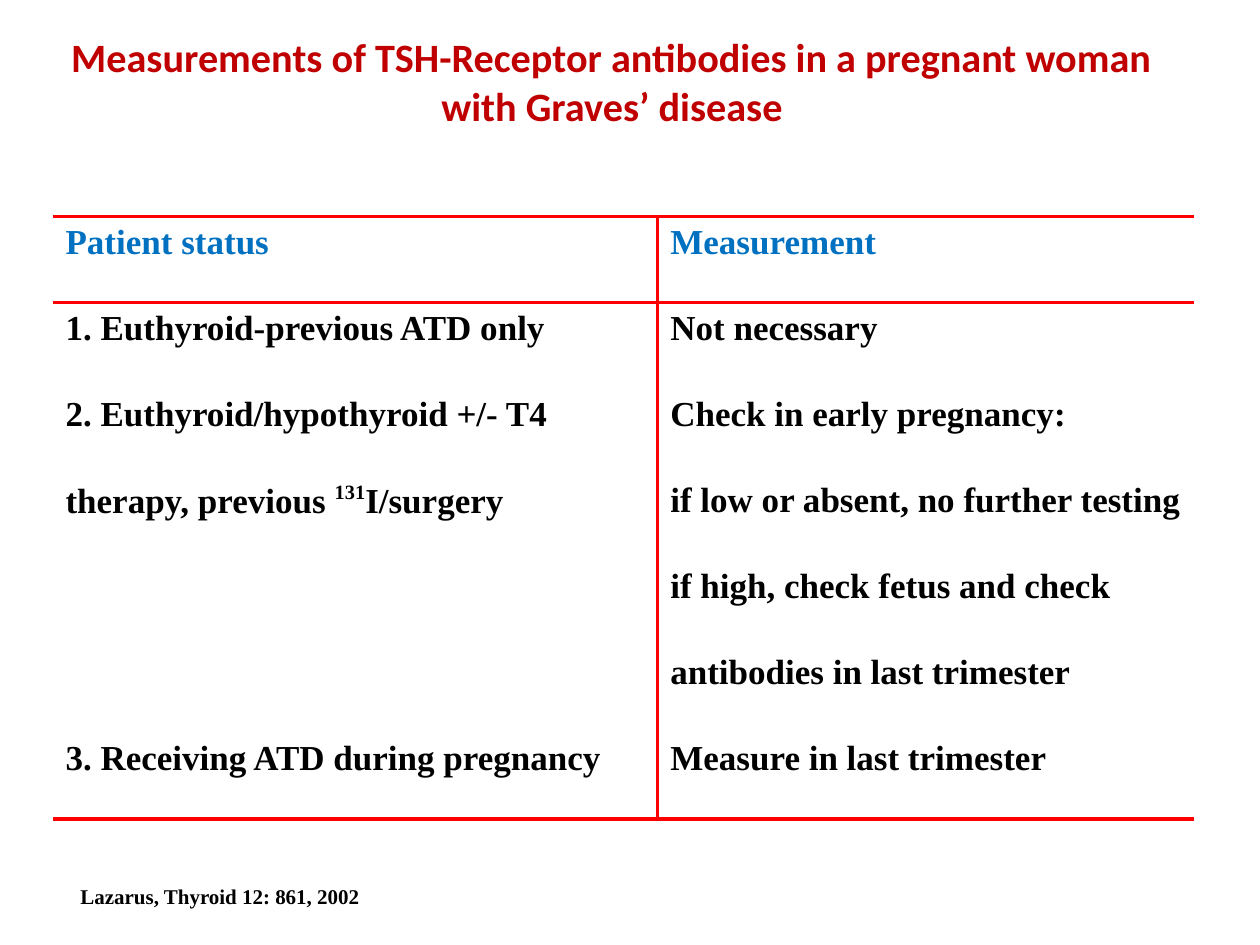
from lxml import etree
from pptx import Presentation
from pptx.dml.color import RGBColor
from pptx.enum.text import MSO_AUTO_SIZE, PP_ALIGN
from pptx.oxml.ns import qn
from pptx.util import Inches, Pt

CENTER = PP_ALIGN.CENTER
LEFT = PP_ALIGN.LEFT
GROW = MSO_AUTO_SIZE.SHAPE_TO_FIT_TEXT
PLAIN = "{2D5ABB26-0587-4C30-8999-92F81FD0307C}"
BLACK, BLUE, RED, DARK = "000000", "0070C0", "FF0000", "C00000"
SERIF, SANS = "Times New Roman", "Calibri"

ROWS = [
    (["Patient status"], ["Measurement"]),
    (["1. Euthyroid-previous ATD only"], ["Not necessary"]),
    (["2. Euthyroid/hypothyroid +/- T4"], ["Check in early pregnancy:"]),
    (["therapy, previous ", ("131", 42), "I/surgery"],
     ["if low or absent, no further testing"]),
    ([], ["if high, check fetus and check"]),
    ([], ["antibodies in last trimester"]),
    (["3. Receiving ATD during pregnancy"], ["Measure in last trimester"]),
]


def color(code):
    return RGBColor.from_string(code)


class Page:
    def __init__(self, slide, rule=RED, width=2.25):
        self.slide = slide
        self.rule = rule
        self.width = width

    def add_runs(self, para, runs, size, tint, font=SERIF):
        for item in runs:
            text, lift = (item, 0) if isinstance(item, str) else item
            run = para.add_run()
            run.text = text
            run.font.name = font
            run.font.size = Pt(size)
            run.font.bold = True
            run.font.color.rgb = color(tint)
            if lift:
                run._r.get_or_add_rPr().set("baseline", str(lift * 1000))

    def text(self, box, runs, size, tint, font=SERIF, align=LEFT, wrap=True):
        shape = self.slide.shapes.add_textbox(*map(Inches, box))
        frame = shape.text_frame
        frame.word_wrap = wrap
        frame.auto_size = GROW
        para = frame.paragraphs[0]
        para.alignment = align
        self.add_runs(para, runs, size, tint, font)

    def border(self, cell, sides):
        props = cell._tc.get_or_add_tcPr()
        for side in "LRTB":
            line = etree.SubElement(props, qn("a:ln" + side))
            if side in sides:
                line.set("w", str(Pt(self.width)))
                fill = etree.SubElement(line, qn("a:solidFill"))
                etree.SubElement(fill, qn("a:srgbClr"), val=self.rule)
            else:
                etree.SubElement(line, qn("a:noFill"))

    def table(self, box, rows, widths, size):
        left, top, width, height = map(Inches, box)
        frame = self.slide.shapes.add_table(
            len(rows), len(widths), left, top, width, height)
        grid = frame.table
        grid.first_row = grid.horz_banding = False
        grid._tbl.tblPr.find(qn("a:tableStyleId")).text = PLAIN
        for col, span in zip(grid.columns, widths):
            col.width = Inches(span)
        last = len(rows) - 1
        for i, row in enumerate(rows):
            grid.rows[i].height = height // len(rows)
            for j, runs in enumerate(row):
                cell = grid.cell(i, j)
                sides = "RL"[j]
                if i in (0, 1):
                    sides += "T"
                if i in (0, last):
                    sides += "B"
                self.border(cell, sides)
                cell.fill.background()
                para = cell.text_frame.paragraphs[0]
                self.add_runs(para, runs, size, BLACK if i else BLUE)


def main():
    deck = Presentation()
    deck.slide_width, deck.slide_height = Inches(10), Inches(7.5)
    page = Page(deck.slides.add_slide(deck.slide_layouts[6]))
    page.table((0.42, 1.72, 9.06, 4.78), ROWS, (4.8, 4.26), 20)
    page.text((0.54, 6.96, 2.44, 0.3), ["Lazarus, Thyroid 12: 861, 2002"],
              12, BLACK, wrap=False)
    title = ("Measurements of TSH-Receptor antibodies in a pregnant woman "
             "with Graves’ disease")
    page.text((0.26, 0.21, 9.2, 0.88), [title], 23, DARK, SANS, CENTER)
    deck.save("out.pptx")


if __name__ == "__main__":
    main()
